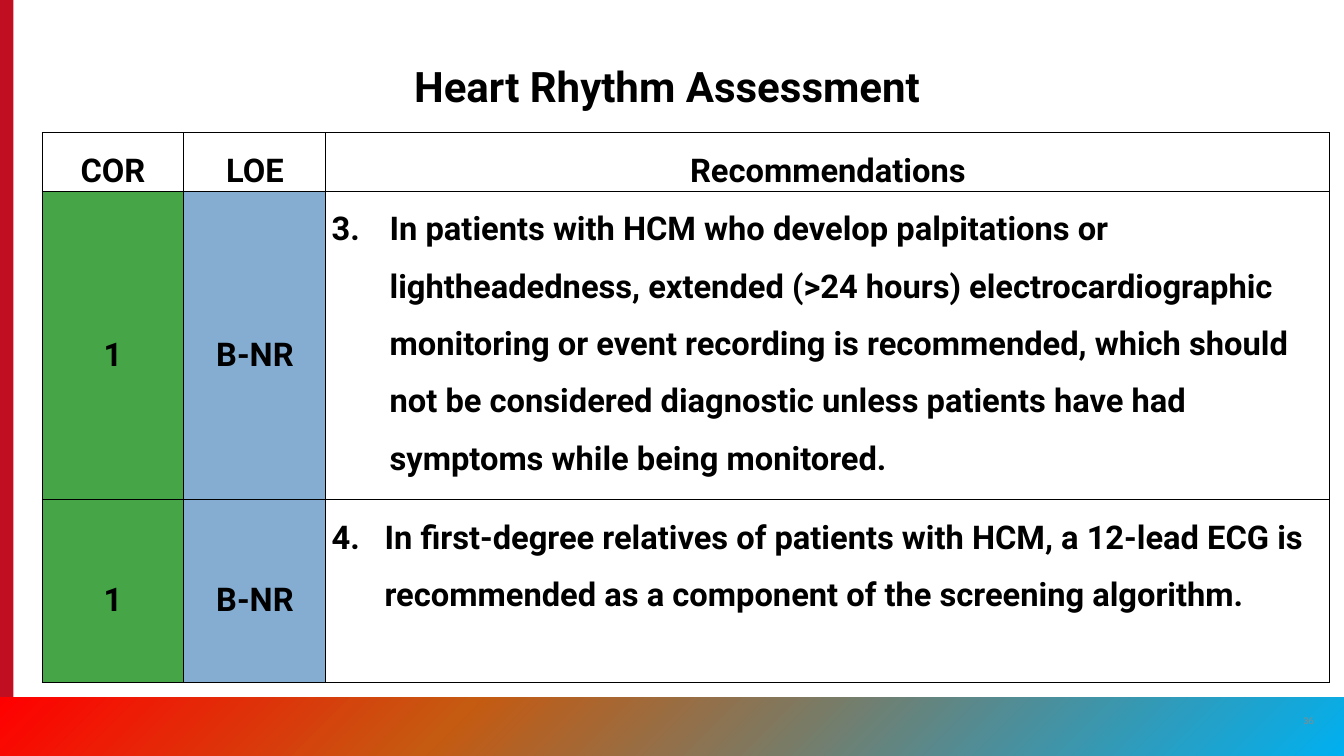
from lxml import etree
from pptx import Presentation
from pptx import util as u
from pptx.dml.color import RGBColor
from pptx.enum import shapes, text
from pptx.oxml import ns

COLUMNS, ROWS = 16, 9
BLACK, WHITE, GREY = "000000", "FFFFFF", "8A8B8A"
RED, GREEN, BLUE = "C10E21", "45A547", "85ADD1"
CENTER = text.PP_ALIGN.CENTER
MIDDLE = text.MSO_ANCHOR.MIDDLE


def rgb(value):
    return RGBColor.from_string(value)


def add_element(parent, tag, **attributes):
    element = etree.SubElement(parent, ns.qn(tag))
    for name, value in attributes.items():
        element.set(name, str(value))
    return element


class SlideBuilder:
    """Places elements on a slide by the columns and rows of a 16 by 9 grid."""

    font_name = "Roboto"

    def __init__(self, presentation):
        self.slide = presentation.slides.add_slide(presentation.slide_layouts[6])
        self.column = presentation.slide_width / COLUMNS
        self.row = presentation.slide_height / ROWS

    def x(self, columns):
        return u.Emu(round(columns * self.column))

    def y(self, rows):
        return u.Emu(round(rows * self.row))

    def box(self, left, top, width, height):
        return self.x(left), self.y(top), self.x(width), self.y(height)

    def add_words(self, paragraph, words, size, color=BLACK, bold=True, align=CENTER):
        paragraph.alignment = align
        run = paragraph.add_run()
        run.text = words
        font = run.font
        font.name, font.size, font.bold = self.font_name, u.Pt(size), bold
        font.color.rgb = rgb(color)

    def rectangle(self, *place):
        shape = self.slide.shapes.add_shape(
            shapes.MSO_SHAPE.RECTANGLE, *self.box(*place))
        shape.shadow.inherit = False
        shape.line.fill.background()
        return shape

    def solid_bar(self, color, *place):
        fill = self.rectangle(*place).fill
        fill.solid()
        fill.fore_color.rgb = rgb(color)

    def gradient_bar(self, stops, *place):
        shape = self.rectangle(*place)
        shape.rotation = 180
        shape.fill.gradient()
        shape.fill.gradient_angle = 315
        stop_list = shape._element.spPr.find(".//" + ns.qn("a:gsLst"))
        for stop in list(stop_list):
            stop_list.remove(stop)
        for percent, color in stops:
            stop = add_element(stop_list, "a:gs", pos=percent * 1000)
            add_element(stop, "a:srgbClr", val=color)

    def textbox(self, words, size, *place, anchor=text.MSO_ANCHOR.TOP, **style):
        frame = self.slide.shapes.add_textbox(*self.box(*place)).text_frame
        frame.word_wrap = True
        frame.vertical_anchor = anchor
        self.add_words(frame.paragraphs[0], words, size, **style)

    def table(self, left, top, widths, heights):
        place = self.box(left, top, sum(widths), sum(heights))
        table = self.slide.shapes.add_table(len(heights), len(widths), *place).table
        table.first_row = table.horz_banding = False
        for column, width in zip(table.columns, widths):
            column.width = self.x(width)
        for row, height in zip(table.rows, heights):
            row.height = self.y(height)
        return table

    def cell(self, cell, words, fill=None, number=None, indent=0):
        """Fill one table cell; a number makes it a numbered, hanging paragraph."""
        cell.margin_left = cell.margin_right = self.x(0.07)
        cell.margin_top = cell.margin_bottom = 0
        paragraph = cell.text_frame.paragraphs[0]
        paragraph.line_spacing = 1.5
        if number:
            properties = paragraph._p.get_or_add_pPr()
            properties.set("marL", str(self.x(indent)))
            properties.set("indent", str(-self.x(indent)))
            add_element(properties, "a:buAutoNum", type="arabicPeriod", startAt=number)
            self.add_words(paragraph, words, 28, align=text.PP_ALIGN.LEFT)
        else:
            cell.vertical_anchor = MIDDLE
            self.add_words(paragraph, words, 28)
        self.borders(cell)
        if fill:
            cell.fill.solid()
            cell.fill.fore_color.rgb = rgb(fill)
        else:
            cell.fill.background()

    def borders(self, cell):
        for side in "LRTB":
            line = add_element(cell._tc.get_or_add_tcPr(), f"a:ln{side}", w=u.Pt(1))
            add_element(add_element(line, "a:solidFill"), "a:srgbClr", val=BLACK)


RECOMMENDATIONS = [
    (3, 0.69, "In patients with HCM who develop palpitations or lightheadedness, "
     "extended (>24 hours) electrocardiographic monitoring or event recording is "
     "recommended, which should not be considered diagnostic unless patients have "
     "had symptoms while being monitored."),
    (4, 0.63, "In first-degree relatives of patients with HCM, a 12-lead ECG is "
     "recommended as a component of the screening algorithm."),
]


def main():
    presentation = Presentation()
    presentation.slide_width, presentation.slide_height = u.Inches(16), u.Inches(9)
    builder = SlideBuilder(presentation)

    builder.solid_bar(RED, 0, 0, 0.16, ROWS)
    builder.gradient_bar([(0, "00B0F0"), (66, "C55A11"), (100, "FF0000")],
                         0, 8.3, COLUMNS, 0.7)
    builder.textbox("36", 8, 15.34, 8.34, 0.48, 0.48,
                    anchor=MIDDLE, color=GREY, bold=False)
    builder.textbox("Heart Rhythm Assessment ", 36, 1.9, 0.67, 12.21, 1.25)

    table = builder.table(0.5, 1.58, [1.69, 1.69, 11.95], [0.66, 3.67, 2.17])
    for column, heading in enumerate(["COR", "LOE", "Recommendations"]):
        builder.cell(table.cell(0, column), heading, WHITE)
    for row, (number, indent, advice) in enumerate(RECOMMENDATIONS, start=1):
        builder.cell(table.cell(row, 0), "1", GREEN)
        builder.cell(table.cell(row, 1), "B-NR", BLUE)
        builder.cell(table.cell(row, 2), advice, number=number, indent=indent)

    presentation.save("out.pptx")


if __name__ == "__main__":
    main()
